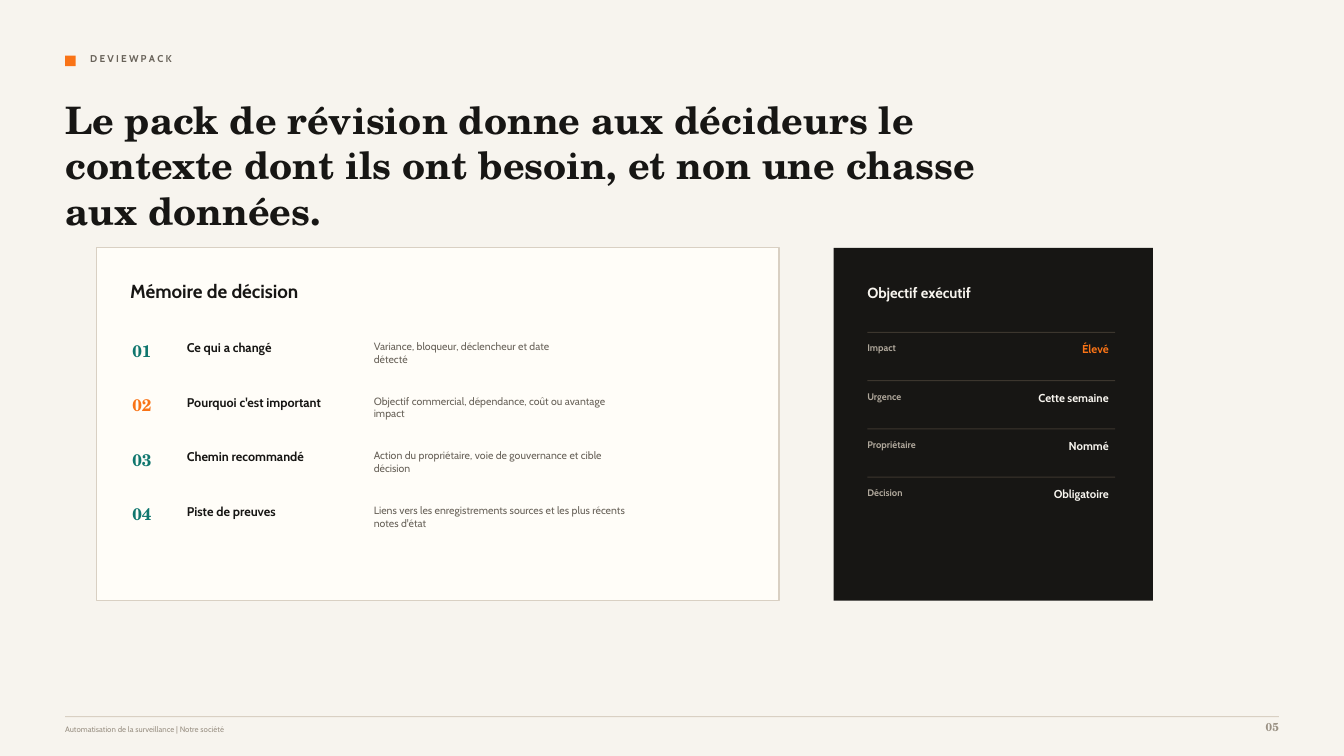
from pptx import Presentation
from pptx.dml.color import RGBColor
from pptx.enum.shapes import MSO_SHAPE
from pptx.enum.text import MSO_ANCHOR, MSO_AUTO_SIZE, PP_ALIGN
from pptx.util import Emu, Pt

RECTANGLE = MSO_SHAPE.RECTANGLE
TOP = MSO_ANCHOR.TOP
NO_FIT = MSO_AUTO_SIZE.NONE
LEFT, RIGHT = PP_ALIGN.LEFT, PP_ALIGN.RIGHT

PAPER = RGBColor(0xF7, 0xF4, 0xEE)
CARD = RGBColor(0xFF, 0xFD, 0xF8)
INK = RGBColor(0x17, 0x16, 0x14)
BORDER = RGBColor(0xD9, 0xD0, 0xC3)
DIVIDER = RGBColor(0x3C, 0x36, 0x2E)
GREY = RGBColor(0x69, 0x63, 0x5A)
SAND = RGBColor(0xAF, 0xA7, 0x9B)
MUTED = RGBColor(0x9A, 0x91, 0x84)
ORANGE = RGBColor(0xF9, 0x73, 0x16)
TEAL = RGBColor(0x0F, 0x76, 0x6E)

SANS, SERIF = "Cabin", "TeX Gyre Schola"

# Content
KICKER = "D E V I E W P A C K"
TITLE = ("Le pack de révision donne aux décideurs le contexte dont ils ont "
         "besoin, et non une chasse aux données.")
MEMORY_HEADING = "Mémoire de décision"
MEMORY = [
    ("Ce qui a changé", TEAL,
     ["Variance, bloqueur, déclencheur et date", "détecté"]),
    ("Pourquoi c'est important", ORANGE,
     ["Objectif commercial, dépendance, coût ou avantage", "impact"]),
    ("Chemin recommandé", TEAL,
     ["Action du propriétaire, voie de gouvernance et cible", "décision"]),
    ("Piste de preuves", TEAL,
     ["Liens vers les enregistrements sources et les plus récents",
      "notes d'état"]),
]
GOAL_HEADING = "Objectif exécutif"
GOALS = [
    ("Impact", "Élevé", ORANGE),
    ("Urgence", "Cette semaine", PAPER),
    ("Propriétaire", "Nommé", PAPER),
    ("Décision", "Obligatoire", PAPER),
]
FOOTER = "Automatisation de la surveillance | Notre société"
PAGE_NUMBER = "05"

# Layout in px, 96 to the inch
PX = 9525
MARGIN = 62
PANEL_TOP, PANEL_HEIGHT = 236, 336
MEMORY_TOP, MEMORY_STEP = 324, 52
GOAL_LEFT, GOAL_TOP, GOAL_STEP = 826, 316, 46


def px(*lengths):
    return [Emu(length * PX) for length in lengths]


def add_block(left, top, width, height, fill, line=None):
    block = page.shapes.add_shape(RECTANGLE, *px(left, top, width, height))
    block.shadow.inherit = False
    block.fill.solid()
    block.fill.fore_color.rgb = fill
    if line is None:
        block.line.fill.background()
    else:
        block.line.color.rgb = line
        block.line.width = Pt(0.75)


def write(box, lines, size, color, font=SANS, bold=True, align=LEFT):
    frame = box.text_frame
    frame.word_wrap = True
    frame.auto_size = NO_FIT
    frame.vertical_anchor = TOP
    frame.margin_left = frame.margin_top = 0
    frame.margin_right = frame.margin_bottom = 0
    frame.text = "\n".join(lines)
    for para in frame.paragraphs:
        para.alignment = align
        para.font.name = font
        para.font.size = Pt(size)
        para.font.bold = bold
        para.font.color.rgb = color


def add_text(left, top, width, height, lines, size, color, **style):
    box = page.shapes.add_textbox(*px(left, top, width, height))
    write(box, lines, size, color, **style)


deck = Presentation()
deck.slide_width, deck.slide_height = px(1280, 720)
page = deck.slides.add_slide(deck.slide_layouts[5])
page.background.fill.solid()
page.background.fill.fore_color.rgb = PAPER

# Header
add_block(MARGIN, 53, 10, 10, ORANGE)
add_text(86, 50, 520, 18, [KICKER], 7.1, GREY)
title = page.shapes.title
title.left, title.top, title.width, title.height = px(MARGIN, 92, 910, 98)
write(title, [TITLE], 27, INK, font=SERIF)

# Decision memory
add_block(92, PANEL_TOP, 650, PANEL_HEIGHT, CARD, BORDER)
add_text(124, 266, 260, 24, [MEMORY_HEADING], 13.5, INK)
for index, (label, color, details) in enumerate(MEMORY):
    top = MEMORY_TOP + index * MEMORY_STEP
    add_text(126, top, 34, 24, [f"{index + 1:02}"], 12, color, font=SERIF)
    add_text(178, top, 166, 18, [label], 9, INK)
    add_text(356, top, 300, 30, details, 7.5, GREY, bold=False)

# Executive goal
add_block(794, PANEL_TOP, 304, PANEL_HEIGHT, INK)
add_text(GOAL_LEFT, 270, 180, 20, [GOAL_HEADING], 10.5, PAPER)
for index, (label, value, color) in enumerate(GOALS):
    top = GOAL_TOP + index * GOAL_STEP
    add_block(GOAL_LEFT, top, 236, 1, DIVIDER)
    add_text(GOAL_LEFT, top + 10, 92, 16, [label], 6.8, SAND)
    add_text(946, top + 10, 110, 16, [value], 8.2, color, align=RIGHT)

# Footer
add_block(MARGIN, 682, 1156, 1, BORDER)
add_text(MARGIN, 690, 760, 14, [FOOTER], 5.6, MUTED, bold=False)
add_text(1170, 686, 48, 18, [PAGE_NUMBER], 8.2, MUTED, font=SERIF, align=RIGHT)

deck.save("out.pptx")
